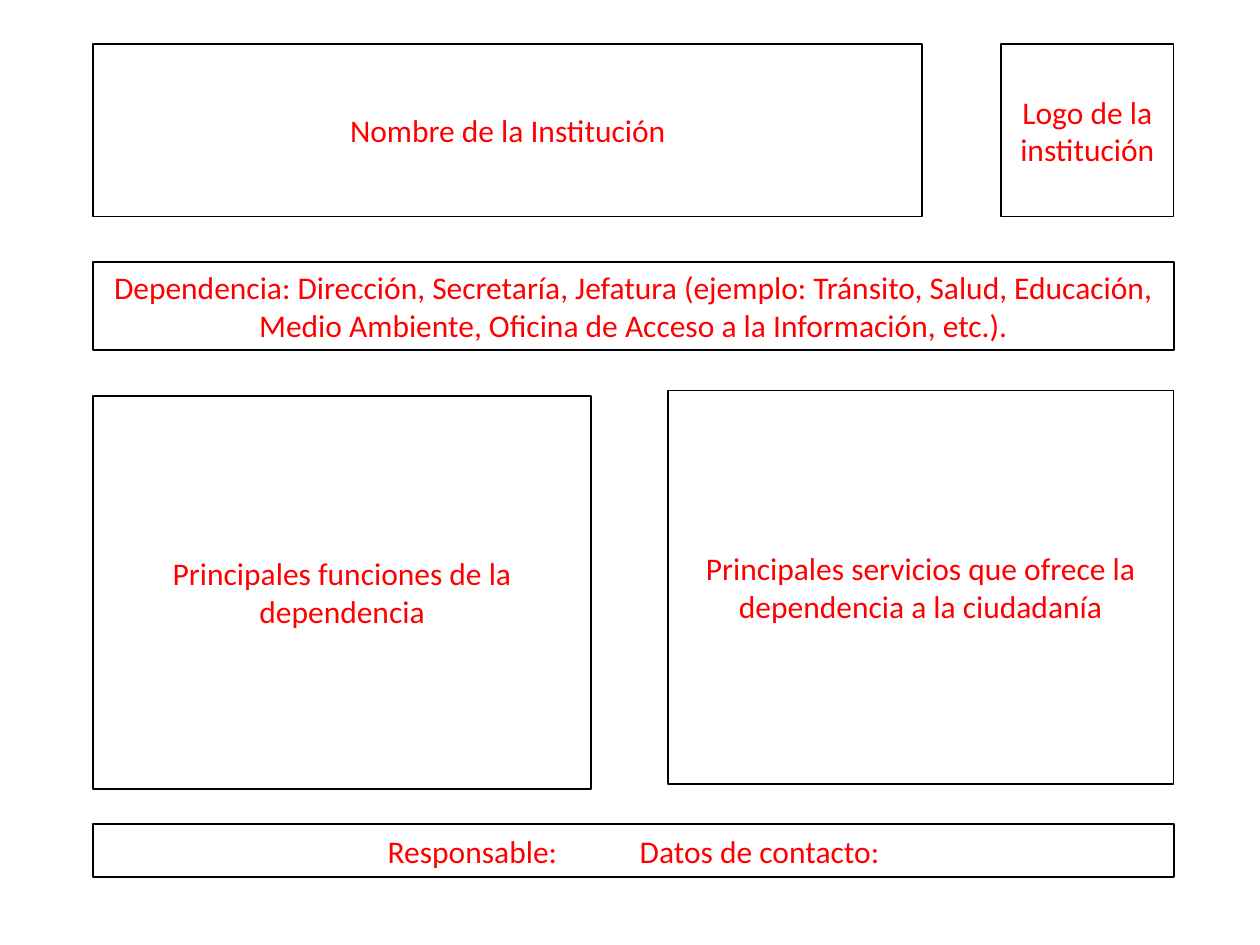
from pptx import Presentation
from pptx.dml.color import RGBColor
from pptx.enum.shapes import MSO_SHAPE
from pptx.enum.text import MSO_ANCHOR, PP_ALIGN
from pptx.util import Inches, Pt

HUES = {"edge": "000000", "text": "FF0000"}
FONT = {"name": "Calibri", "size": Pt(18)}
FRAME = {"word_wrap": True, "vertical_anchor": MSO_ANCHOR.MIDDLE}
COLS, ROWS = 100, 75


def apply(item, style):
    for key, value in style.items():
        setattr(item, key, value)


class Page:
    def __init__(self, deck):
        self.unit_x = deck.slide_width / COLS
        self.unit_y = deck.slide_height / ROWS
        self.slide = deck.slides.add_slide(deck.slide_layouts[6])

    def hue(self, name):
        return RGBColor.from_string(HUES[name])

    def box(self, text, left, top, right, height):
        shape = self.slide.shapes.add_shape(
            MSO_SHAPE.RECTANGLE,
            round(left * self.unit_x), round(top * self.unit_y),
            round((right - left) * self.unit_x), round(height * self.unit_y))
        shape.shadow.inherit = False
        shape.fill.background()
        shape.line.width = Pt(1)
        shape.line.color.rgb = self.hue("edge")
        apply(shape.text_frame, FRAME)
        para = shape.text_frame.paragraphs[0]
        para.alignment = PP_ALIGN.CENTER
        run = para.add_run()
        run.text = text
        apply(run.font, FONT)
        run.font.color.rgb = self.hue("text")


def main():
    deck = Presentation()
    deck.slide_width, deck.slide_height = Inches(10), Inches(7.5)
    page = Page(deck)
    left, right = 7.4, 93.15
    top, head, body = 3.5, 13.7, 31.2

    page.box("Logo de la institución", right - head, top, right, head)
    page.box("Nombre de la Institución", left, top, 73.2, head)
    page.box("Dependencia: Dirección, Secretaría, Jefatura (ejemplo: Tránsito, "
             "Salud, Educación, Medio Ambiente, Oficina de Acceso a la "
             "Información, etc.).", left, 20.8, right, 7)
    page.box("Responsable:\t\tDatos de contacto:", left, 65.4, right, 4.2)
    page.box("Principales funciones de la dependencia",
             left, 31.4, 46.9, body)
    page.box("Principales servicios que ofrece la dependencia a la ciudadanía",
             53, 31, right, body)
    deck.save("out.pptx")


if __name__ == "__main__":
    main()
